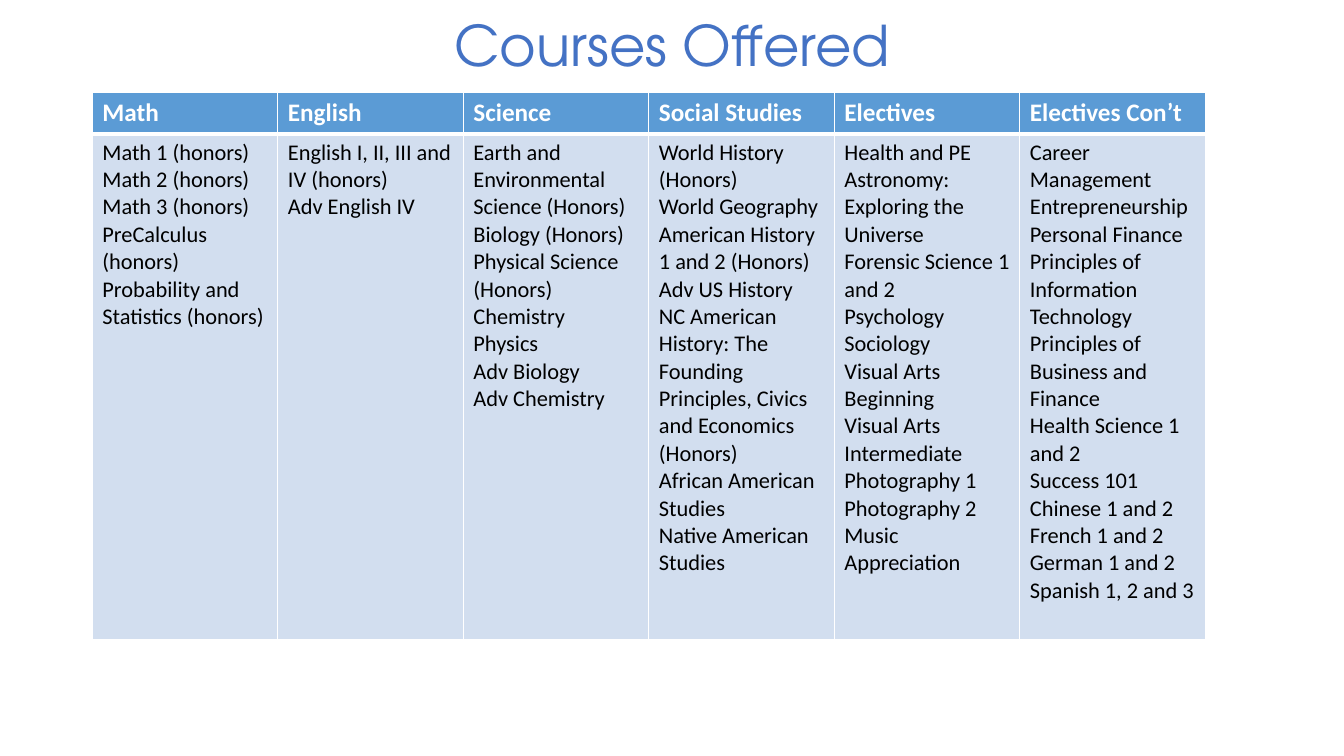
from lxml.etree import SubElement
from pptx import Presentation
from pptx.dml.color import RGBColor
from pptx.enum.text import MSO_ANCHOR, PP_ALIGN
from pptx.oxml.ns import qn
from pptx.util import Pt

# Content
TITLE = "Courses Offered"
COURSES = {
    "Math": [
        "Math 1 (honors)", "Math 2 (honors)", "Math 3 (honors)",
        "PreCalculus (honors)", "Probability and Statistics (honors)",
    ],
    "English": ["English I, II, III and IV (honors)", "Adv English IV"],
    "Science": [
        "Earth and Environmental Science (Honors)", "Biology (Honors)",
        "Physical Science (Honors)", "Chemistry", "Physics",
        "Adv Biology", "Adv Chemistry",
    ],
    "Social Studies": [
        "World History (Honors)", "World Geography",
        "American History 1 and 2 (Honors)", "Adv US History",
        "NC American History: The Founding Principles, Civics and Economics (Honors)",
        "African American Studies", "Native American Studies",
    ],
    "Electives": [
        "Health and PE", "Astronomy: Exploring the Universe",
        "Forensic Science 1 and 2", "Psychology", "Sociology",
        "Visual Arts Beginning", "Visual Arts Intermediate",
        "Photography 1", "Photography 2", "Music Appreciation",
    ],
    "Electives Con’t": [
        "Career Management", "Entrepreneurship", "Personal Finance",
        "Principles of Information Technology",
        "Principles of Business and Finance", "Health Science 1 and 2",
        "Success 101", "Chinese 1 and 2", "French 1 and 2",
        "German 1 and 2", "Spanish 1, 2 and 3",
    ],
}

# Style and layout
WHITE = RGBColor(0xFF, 0xFF, 0xFF)
BLACK = RGBColor(0, 0, 0)
TITLE_BLUE = RGBColor(0x44, 0x72, 0xC4)
HEADER_BLUE = RGBColor(0x5B, 0x9B, 0xD5)
BODY_BLUE = RGBColor(0xD2, 0xDE, 0xEF)
LEFT, TOP = 66, 66.3
COLUMN_WIDTH = 132.5
HEADER_HEIGHT, BODY_HEIGHT = 28.1, 361.5
THIN, THICK = 1, 3


def write(tf, lines, size, color, font="Calibri", bold=False,
          align=PP_ALIGN.LEFT, spacing=1.0):
    for i, line in enumerate(lines):
        p = tf.paragraphs[0] if i == 0 else tf.add_paragraph()
        p.alignment = align
        p.line_spacing = spacing
        r = p.add_run()
        r.text = line
        r.font.name = font
        r.font.size = Pt(size)
        r.font.bold = bold
        r.font.color.rgb = color


def style_cell(cell, fill, top, bottom):
    tcPr = cell._tc.get_or_add_tcPr()
    for side, width in (("L", THIN), ("R", THIN), ("T", top), ("B", bottom)):
        ln = SubElement(tcPr, qn(f"a:ln{side}"), w=str(Pt(width)))
        SubElement(SubElement(ln, qn("a:solidFill")), qn("a:srgbClr"), val=str(WHITE))
    cell.fill.solid()
    cell.fill.fore_color.rgb = fill


prs = Presentation()
prs.slide_width, prs.slide_height = Pt(960), Pt(540)
s = prs.slides.add_slide(prs.slide_layouts[5])

# Title
title = s.shapes.title
title.left, title.top, title.width, title.height = Pt(LEFT), Pt(0), Pt(828), Pt(69)
title.text_frame.vertical_anchor = MSO_ANCHOR.MIDDLE
write(title.text_frame, [TITLE], 40, TITLE_BLUE, font="TeX Gyre Adventor",
      align=PP_ALIGN.CENTER, spacing=0.9)

# Course table: one column per subject
table = s.shapes.add_table(
    2, len(COURSES), Pt(LEFT), Pt(TOP), Pt(COLUMN_WIDTH * len(COURSES)),
    Pt(HEADER_HEIGHT + BODY_HEIGHT)).table
table.rows[0].height = Pt(HEADER_HEIGHT)
table.rows[1].height = Pt(BODY_HEIGHT)
for col, (subject, courses) in enumerate(COURSES.items()):
    table.columns[col].width = Pt(COLUMN_WIDTH)
    header, body = table.cell(0, col), table.cell(1, col)
    style_cell(header, HEADER_BLUE, THIN, THICK)
    style_cell(body, BODY_BLUE, THICK, THIN)
    write(header.text_frame, [subject], 18, WHITE, bold=True)
    write(body.text_frame, courses, 16, BLACK)

prs.save("out.pptx")
